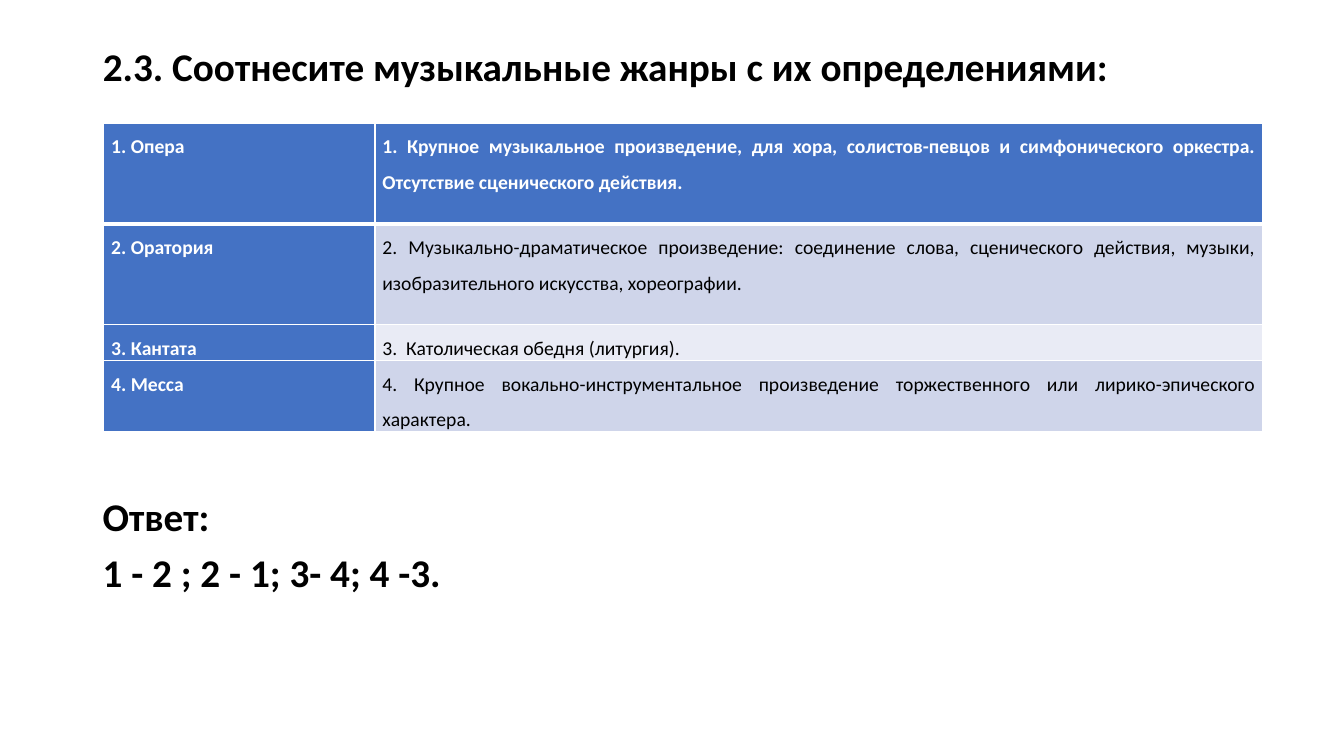
import pptx
import pptx.dml.color
import pptx.enum.text
import pptx.util
from lxml import etree
from pptx.oxml.ns import qn

Pt = pptx.util.Pt
ALIGN = pptx.enum.text.PP_ALIGN

COLORS = {
    "black": "000000",
    "white": "FFFFFF",
    "blue": "4472C4",
    "band": "CFD5EA",
    "pale": "E9EBF5",
}
HEAD = {"size": Pt(28), "bold": True, "name": "Calibri"}
CELL = {"size": Pt(14), "name": "Calibri"}
LEFT = 66.24
WIDTH = 828

TITLE = "2.3. Соотнесите музыкальные жанры с их определениями:"
ANSWER = ["Ответ:", "1 - 2 ; 2 - 1; 3- 4; 4 -3."]
COLS = [193.7, 634.3]
# genre, definition, row height, fill of the definition
GENRES = [
    ("1. Опера",
     "1. Крупное музыкальное произведение, для хора, солистов-певцов и "
     "симфонического оркестра. Отсутствие сценического действия.",
     72, "blue"),
    ("2. Оратория",
     "2. Музыкально-драматическое произведение: соединение слова, "
     "сценического действия, музыки, изобразительного искусства, хореографии.",
     72, "band"),
    ("3. Кантата", "3.  Католическая обедня (литургия).", 22.3, "pale"),
    ("4. Месса",
     "4. Крупное вокально-инструментальное произведение торжественного или "
     "лирико-эпического характера.",
     46.8, "band"),
]


def rgb(name):
    return pptx.dml.color.RGBColor.from_string(COLORS[name])


def assign(target, values):
    for key, value in values.items():
        setattr(target, key, value)


def write(frame, lines, font, color, para):
    frame.text = "\n".join(lines)
    for item in frame.paragraphs:
        assign(item, para)
        for run in item.runs:
            assign(run.font, font)
            run.font.color.rgb = rgb(color)


def heading(shape, lines, top, height):
    assign(shape, {"left": Pt(LEFT), "top": Pt(top),
                   "width": Pt(WIDTH), "height": Pt(height)})
    frame = shape.text_frame
    assign(frame, {"word_wrap": True,
                   "auto_size": pptx.enum.text.MSO_AUTO_SIZE.NONE,
                   "vertical_anchor": pptx.enum.text.MSO_ANCHOR.TOP})
    write(frame, lines, HEAD, "black",
          {"alignment": ALIGN.LEFT, "line_spacing": 0.9,
           "space_before": Pt(0), "space_after": Pt(10)})


def border(cell, row):
    """Draw white edges, with a thick one below the first row."""
    props = cell._tc.get_or_add_tcPr()
    widths = {"L": 1, "R": 1, "T": 3 if row == 1 else 1,
              "B": 3 if row == 0 else 1}
    for side, width in widths.items():
        line = etree.SubElement(props, qn("a:ln" + side), w=str(Pt(width)))
        fill = etree.SubElement(line, qn("a:solidFill"))
        etree.SubElement(fill, qn("a:srgbClr"), val=COLORS["white"])


def fill_cell(cell, text, row, color, align):
    border(cell, row)
    cell.fill.solid()
    cell.fill.fore_color.rgb = rgb(color)
    assign(cell, {"margin_left": Pt(5.2), "margin_right": Pt(5.2),
                  "margin_top": 0, "margin_bottom": 0})
    strong = color == "blue"
    write(cell.text_frame, [text], {**CELL, "bold": strong},
          "white" if strong else "black",
          {"alignment": align, "line_spacing": 1.5})


def genre_table(slide):
    total = sum(genre[2] for genre in GENRES)
    table = slide.shapes.add_table(len(GENRES), len(COLS), Pt(74.2), Pt(87.9),
                                   Pt(WIDTH), Pt(total)).table
    for col, width in zip(table.columns, COLS):
        col.width = Pt(width)
    for row, (genre, meaning, height, color) in enumerate(GENRES):
        table.rows[row].height = Pt(height)
        fill_cell(table.cell(row, 0), genre, row, "blue", ALIGN.LEFT)
        fill_cell(table.cell(row, 1), meaning, row, color, ALIGN.JUSTIFY)


def main():
    deck = pptx.Presentation()
    assign(deck, {"slide_width": Pt(960), "slide_height": Pt(540)})
    slide = deck.slides.add_slide(deck.slide_layouts.get_by_name("Title Only"))
    heading(slide.shapes.title, [TITLE], 30.24, 40)
    genre_table(slide)
    heading(slide.shapes.add_textbox(0, 0, 0, 0), ANSWER, 351.7, 90)
    deck.save("out.pptx")


if __name__ == "__main__":
    main()
